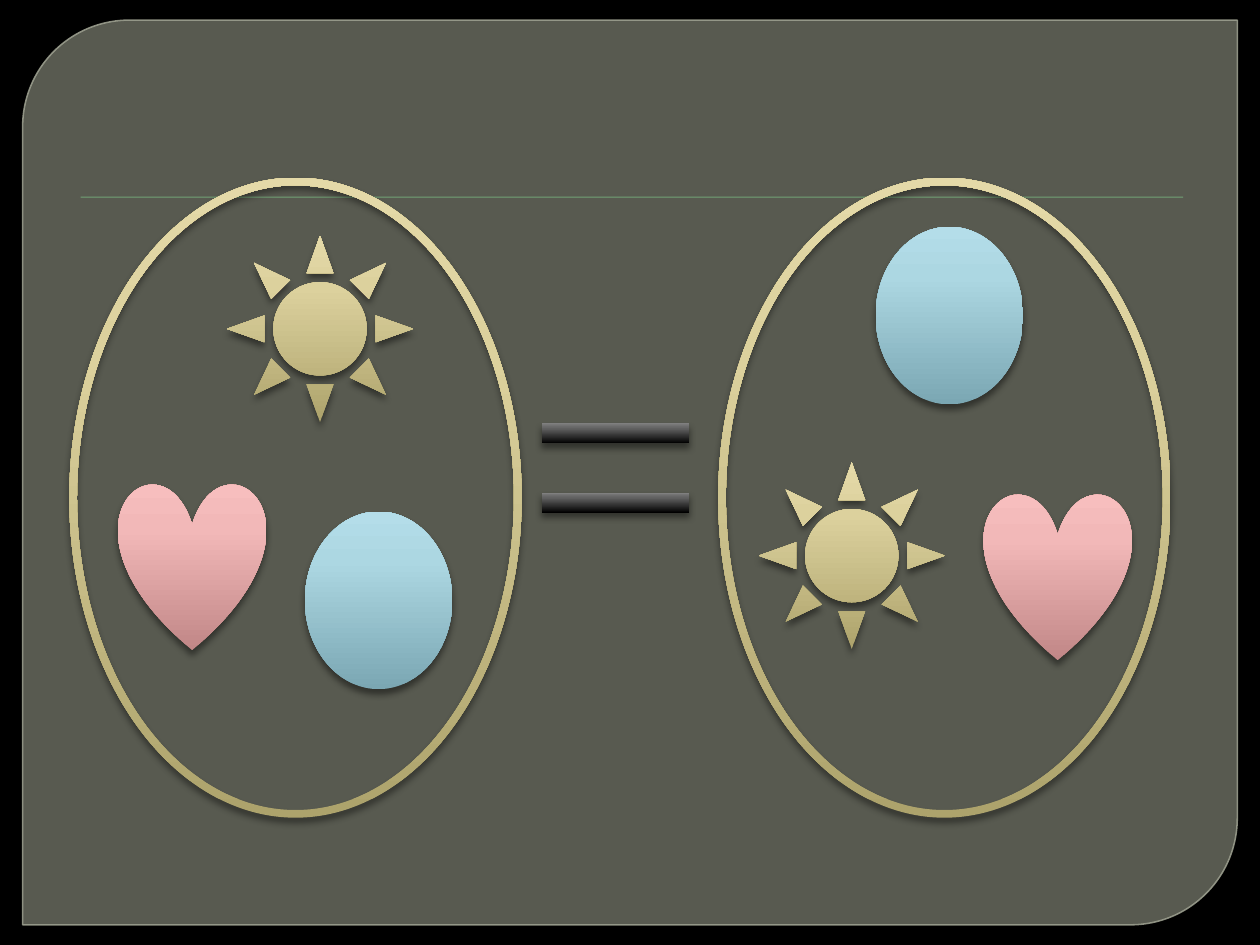
from copy import deepcopy

from lxml import etree
from pptx import Presentation, util as u
from pptx.dml.color import RGBColor
from pptx.enum import shapes
from pptx.oxml import ns

BLACK = RGBColor(0x00, 0x00, 0x00)
PANEL = RGBColor(0x88, 0x8B, 0x7B)
PANEL_EDGE = RGBColor(0x9D, 0xA0, 0x90)
RULE = RGBColor(0x72, 0xA3, 0x76)
GOLD = (RGBColor(0xAD, 0xA3, 0x6C), RGBColor(0xDC, 0xD1, 0x9D), RGBColor(0xE4, 0xD9, 0xA8))
PINK = (RGBColor(0xC1, 0x87, 0x87), RGBColor(0xF2, 0xB8, 0xB8), RGBColor(0xF7, 0xBE, 0xBE))
BLUE = (RGBColor(0x7B, 0xA7, 0xB3), RGBColor(0xAC, 0xD7, 0xE2), RGBColor(0xB4, 0xDD, 0xE9))
GREY = (BLACK, RGBColor(0x5E, 0x5E, 0x5E), RGBColor(0x7F, 0x7F, 0x7F))
KIND = shapes.MSO_SHAPE


class SetSlide:
    stops = (0, 0.72, 1)
    soft_shadow = {"alpha": 43, "blur": 4, "dist": 3}
    rule_shadow = {"alpha": 75, "blur": 1, "dist": 1}

    def __init__(self, deck):
        self.slide = deck.slides.add_slide(deck.slide_layouts[6])
        self.paint(self.slide.background.fill, BLACK)

    def paint(self, fill, color, alpha=None):
        fill.solid()
        fill.fore_color.rgb = color
        if alpha is not None:
            self.fade(fill._xPr.find(ns.qn("a:solidFill"))[0], alpha)

    def fade(self, color_node, alpha):
        etree.SubElement(color_node, ns.qn("a:alpha"), val=str(alpha * 1000))

    def shade(self, fill, colors):
        fill.gradient()
        stop_list = fill._xPr.find(ns.qn("a:gradFill")).find(ns.qn("a:gsLst"))
        stop_list.append(deepcopy(stop_list[0]))
        for stop, position, color in zip(fill.gradient_stops, self.stops, colors):
            for name, value in {"position": position}.items():
                setattr(stop, name, value)
            stop.color.rgb = color
        fill.gradient_angle = 90

    def cast_shadow(self, shape, alpha, blur, dist):
        effects = shape._element.spPr.find(ns.qn("a:effectLst"))
        shadow = etree.SubElement(effects, ns.qn("a:outerShdw"), rotWithShape="0")
        values = {"blurRad": u.Pt(blur), "dist": u.Pt(dist), "dir": 90 * 60000}
        for name, value in values.items():
            shadow.set(name, str(int(value)))
        color = etree.SubElement(shadow, ns.qn("a:srgbClr"), val=str(BLACK))
        self.fade(color, alpha)

    def outline(self, kind, left, top, width, height):
        box = [u.Inches(n) for n in (left, top, width, height)]
        shape = self.slide.shapes.add_shape(kind, *box)
        shape.shadow.inherit = False
        shape.line.fill.background()
        return shape

    def panel(self, *box):
        panel = self.outline(KIND.ROUND_2_DIAG_RECTANGLE, *box)
        for index, value in {0: 0.118, 1: 0}.items():
            panel.adjustments[index] = value
        self.paint(panel.fill, PANEL, 65)
        self.paint(panel.line.fill, PANEL_EDGE, 88)
        panel.line.width = u.Pt(0.87)

    def rule(self, *box):
        rule = self.outline(KIND.RECTANGLE, *box)
        self.paint(rule.fill, RULE)
        self.cast_shadow(rule, **self.rule_shadow)

    def glossy(self, kind, colors, *box):
        shape = self.outline(kind, *box)
        self.shade(shape.fill, colors)
        self.cast_shadow(shape, **self.soft_shadow)
        return shape

    def ring(self, left):
        ring = self.glossy(KIND.DONUT, GOLD, left, 1.41, 3.59, 5.08)
        ring.adjustments[0] = 0.017

    def bar(self, top):
        self.glossy(KIND.RECTANGLE, GREY, 4.3, top, 1.17, 0.16)

    def members(self, sun, heart, egg):
        self.glossy(KIND.SUN, GOLD, *sun, 1.48, 1.48)
        self.glossy(KIND.HEART, PINK, *heart, 1.17, 1.33)
        self.glossy(KIND.OVAL, BLUE, *egg, 1.17, 1.41)


def main():
    deck = Presentation()
    for name, value in {"slide_width": 10, "slide_height": 7.5}.items():
        setattr(deck, name, u.Inches(value))
    equal_sets = SetSlide(deck)
    equal_sets.panel(0.18, 0.16, 9.64, 7.18)
    equal_sets.rule(0.64, 1.56, 8.75, 0.01)
    for left in (0.55, 5.7):
        equal_sets.ring(left)
    for top in (3.36, 3.91):
        equal_sets.bar(top)
    equal_sets.members(sun=(1.8, 1.87), heart=(0.94, 3.83), egg=(2.42, 4.06))
    equal_sets.members(sun=(6.02, 3.67), heart=(7.81, 3.91), egg=(6.95, 1.8))
    deck.save("out.pptx")


if __name__ == "__main__":
    main()
